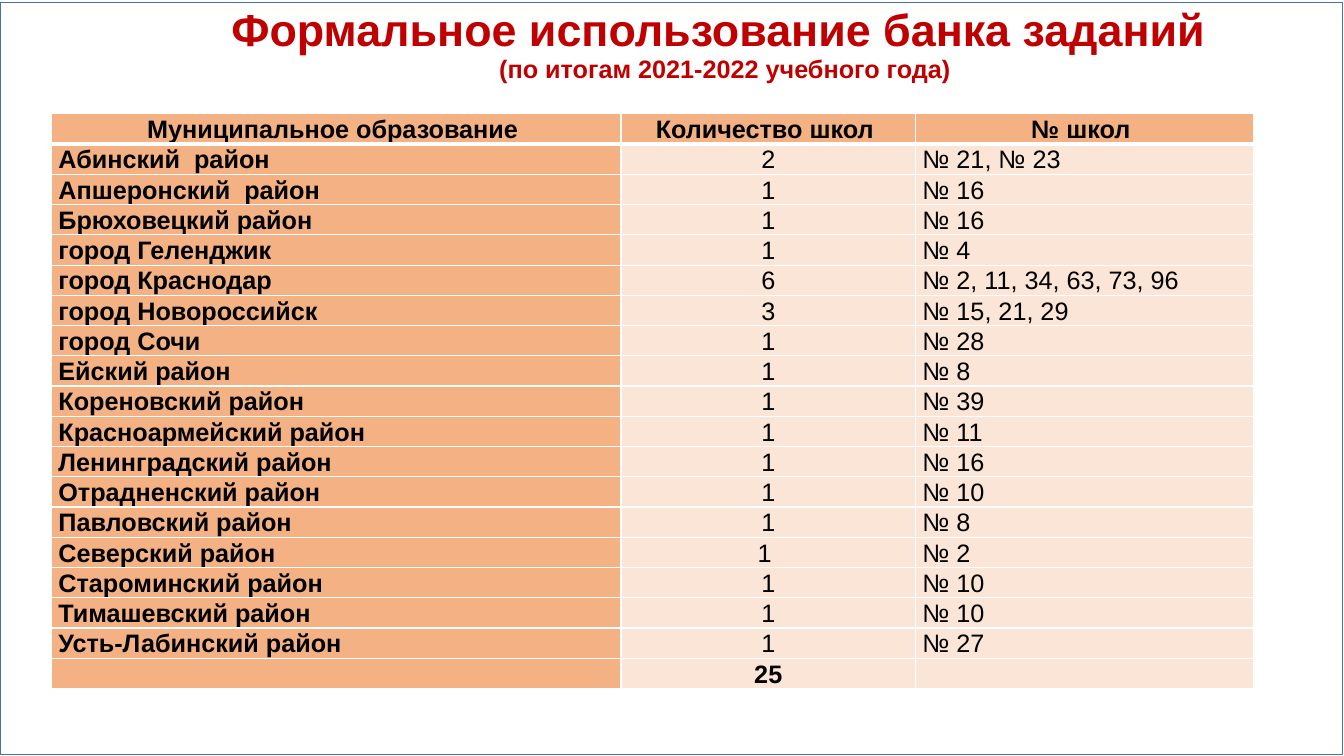
from lxml import etree
from pptx import Presentation
from pptx import util as u
from pptx.dml.color import RGBColor
from pptx.enum import shapes, text
from pptx.oxml.ns import qn

RED = RGBColor(0xC0, 0x00, 0x00)
BLACK = RGBColor(0x00, 0x00, 0x00)
ORANGE = RGBColor(0xF4, 0xB1, 0x83)
PEACH = RGBColor(0xFB, 0xE5, 0xD6)
WHITE = RGBColor(0xFF, 0xFF, 0xFF)
BLUE = RGBColor(0x43, 0x73, 0x9E)

FONT = "Arial"
TITLE = "Формальное использование банка заданий \v(по итогам 2021-2022 учебного года)"
TITLE_SIZES = (32, 18)
COLUMNS = (5.65, 2.92, 3.35)
ROW_HEIGHT = 0.3
HEADER = ("Муниципальное образование ", "Количество школ ", "№ школ ")
SCHOOLS = [
    ("Абинский  район", "2", "№ 21, № 23"),
    ("Апшеронский  район", "1", "№ 16"),
    ("Брюховецкий район", "1", "№ 16"),
    ("город Геленджик", "1", "№ 4"),
    ("город Краснодар", "6", "№ 2, 11, 34, 63, 73, 96"),
    ("город Новороссийск", "3", "№ 15, 21, 29"),
    ("город Сочи", "1", "№ 28"),
    ("Ейский район", "1", "№ 8"),
    ("Кореновский район", "1", "№ 39"),
    ("Красноармейский район", "1", "№ 11"),
    ("Ленинградский район", "1", "№ 16"),
    ("Отрадненский район", "1", "№ 10"),
    ("Павловский район", "1", "№ 8"),
    ("Северский район", "1 ", "№ 2"),
    ("Староминский район", "1", "№ 10"),
    ("Тимашевский район", "1", "№ 10"),
    ("Усть-Лабинский район", "1", "№ 27"),
]
TOTAL = ("", "25", "")


def format_span(span, size, color, bold):
    span.font.name = FONT
    span.font.size = u.Pt(size)
    span.font.bold = bold
    span.font.color.rgb = color


def add_frame(page):
    frame = page.shapes.add_shape(
        shapes.MSO_SHAPE.RECTANGLE, 0, u.Inches(0.02), u.Inches(13.31), u.Inches(7.46))
    frame.shadow.inherit = False
    frame.fill.background()
    frame.line.color.rgb = BLUE
    frame.line.width = u.Pt(0.25)


def fill_title(page):
    title = page.shapes.title
    title.left, title.top = u.Inches(1.31), 0
    title.width, title.height = u.Inches(11.76), u.Inches(0.91)
    box = title.text_frame
    box.word_wrap = True
    box.auto_size = text.MSO_AUTO_SIZE.NONE
    box.vertical_anchor = text.MSO_ANCHOR.MIDDLE
    box.margin_left = box.margin_right = box.margin_top = box.margin_bottom = u.Inches(0.04)
    box.text = TITLE
    para = box.paragraphs[0]
    para.alignment = text.PP_ALIGN.CENTER
    para.line_spacing = 0.9
    for span, size in zip(para.runs, TITLE_SIZES):
        format_span(span, size, RED, True)
    line_break = para._p.find(qn("a:br"))
    etree.SubElement(line_break, qn("a:rPr"), sz=str(TITLE_SIZES[0] * 100))


def set_borders(cell, top, bottom):
    properties = cell._tc.get_or_add_tcPr()
    for side, width in (("L", 1), ("R", 1), ("T", top), ("B", bottom)):
        line = etree.SubElement(properties, qn(f"a:ln{side}"), w=str(u.Pt(width)))
        solid = etree.SubElement(line, qn("a:solidFill"))
        etree.SubElement(solid, qn("a:srgbClr"), val=str(WHITE))


def fill_cell(cell, words, color, bold, centred):
    cell.margin_left = cell.margin_right = u.Inches(0.07)
    cell.margin_top = cell.margin_bottom = 0
    cell.fill.solid()
    cell.fill.fore_color.rgb = color
    cell.text_frame.text = words
    para = cell.text_frame.paragraphs[0]
    para.line_spacing = 1.07
    para.alignment = text.PP_ALIGN.CENTER if centred else text.PP_ALIGN.LEFT
    for span in para.runs:
        format_span(span, 18, BLACK, bold)


def add_school_table(page):
    rows = [HEADER, *SCHOOLS, TOTAL]
    table = page.shapes.add_table(
        len(rows), len(COLUMNS), u.Inches(0.51), u.Inches(1.13),
        u.Inches(sum(COLUMNS)), u.Inches(ROW_HEIGHT * len(rows))).table
    table.horz_banding = False
    table.first_col = True
    for column, width in zip(table.columns, COLUMNS):
        column.width = u.Inches(width)
    for i, row in enumerate(rows):
        table.rows[i].height = u.Inches(ROW_HEIGHT)
        header, total = i == 0, i == len(rows) - 1
        for j, words in enumerate(row):
            cell = table.cell(i, j)
            heading = header or j == 0
            set_borders(cell, 3 if i == 1 else 1, 3 if header else 1)
            fill_cell(cell, words, ORANGE if heading else PEACH,
                      heading or total, header or j == 1)


def main():
    deck = Presentation()
    deck.slide_width, deck.slide_height = u.Inches(13.33), u.Inches(7.5)
    page = deck.slides.add_slide(deck.slide_layouts[5])
    add_frame(page)
    fill_title(page)
    add_school_table(page)
    deck.save("out.pptx")


if __name__ == "__main__":
    main()
